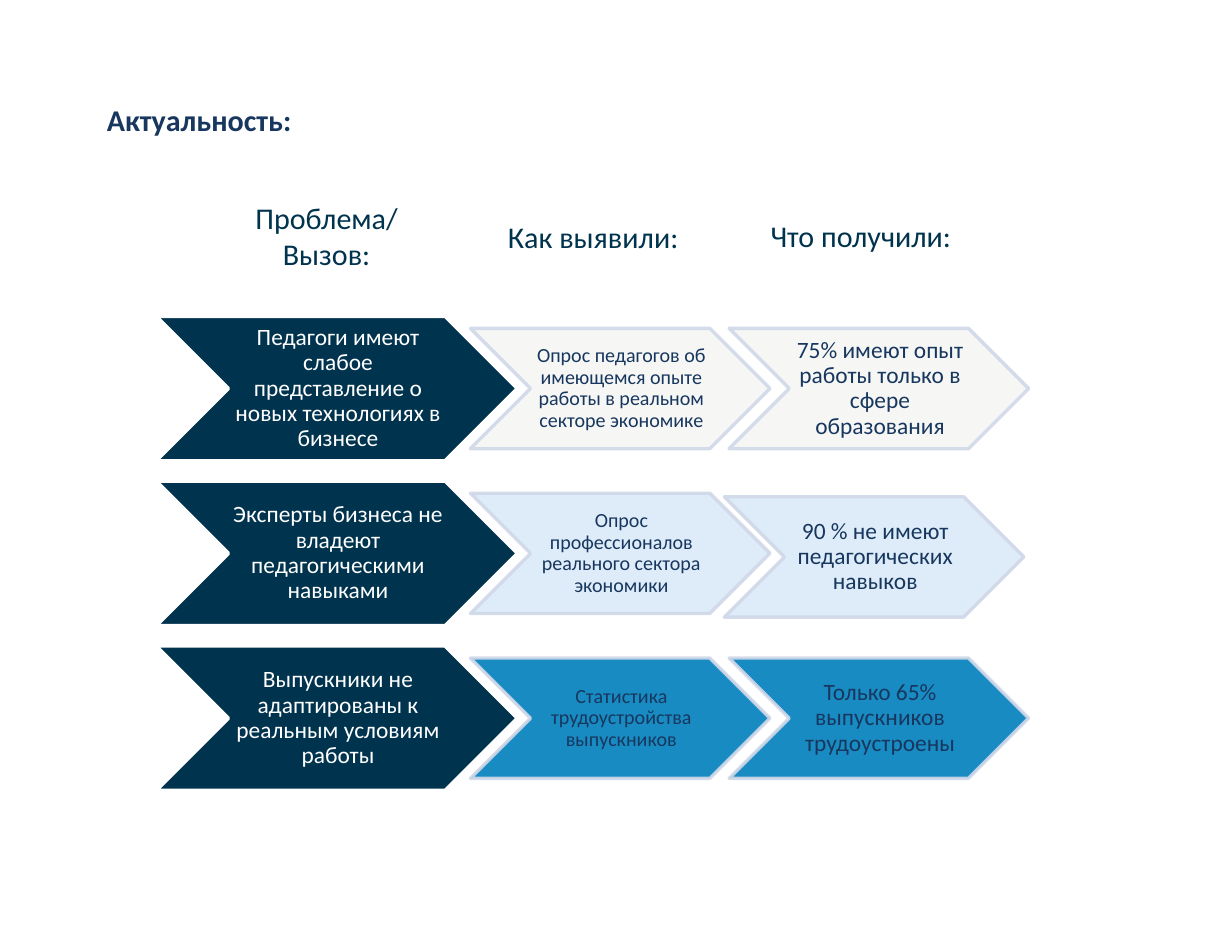
from lxml import etree
from pptx import Presentation
from pptx.dml.color import RGBColor
from pptx.enum.shapes import MSO_SHAPE
from pptx.enum.text import MSO_ANCHOR, PP_ALIGN
from pptx.oxml.ns import qn
from pptx.util import Inches, Pt

RECT, CHEVRON = MSO_SHAPE.RECTANGLE, MSO_SHAPE.CHEVRON
TOP, MIDDLE = MSO_ANCHOR.TOP, MSO_ANCHOR.MIDDLE
LEFT, CENTER = PP_ALIGN.LEFT, PP_ALIGN.CENTER

COLORS = {
    "white": "FFFFFF", "navy": "00334E", "ink": "17375E", "outline": "D0D8E8",
    "grey": "F6F6F5", "pale": "DBEBFA", "blue": "007FBD",
}
FONT = "Calibri"
ROW_PITCH = 1.37

HEADERS = [
    ((1.8, 1.61, 1.83, 0.71), ["Проблема/", "Вызов:"]),
    ((4.04, 1.77, 1.78, 0.4), ["Как выявили:"]),
    ((6.21, 1.76, 1.89, 0.4), ["Что получили:"]),
]
ROWS = [
    ("grey", "Педагоги имеют слабое представление о новых технологиях в бизнесе",
     "Опрос педагогов об имеющемся опыте работы в реальном секторе экономике",
     "75% имеют опыт работы только в сфере образования", (0, 0)),
    ("pale", "Эксперты бизнеса не владеют педагогическими навыками",
     "Опрос профессионалов реального сектора экономики",
     "90 % не имеют педагогических навыков", (-0.04, 0.03)),
    ("blue", "Выпускники не адаптированы к реальным условиям работы",
     "Статистика трудоустройства выпускников",
     "Только 65% выпускников трудоустроены", (0, 0)),
]


def rgb(name):
    """Return the named colour."""
    return RGBColor.from_string(COLORS[name])


def set_alpha(fill, percent):
    """Make a solid fill element partly transparent."""
    alpha = etree.SubElement(fill.find(qn("a:srgbClr")), qn("a:alpha"))
    alpha.set("val", str(percent * 1000))


def write(tf, lines, size, color, align=CENTER, bold=False, spacing=None):
    """Fill a text frame with one paragraph per line."""
    tf.word_wrap = True
    for i, line in enumerate(lines):
        p = tf.paragraphs[0] if i == 0 else tf.add_paragraph()
        p.alignment = align
        if spacing:
            p.line_spacing = spacing
        r = p.add_run()
        r.text = line
        r.font.name, r.font.size, r.font.bold = FONT, Pt(size), bold
        r.font.color.rgb = rgb(color)


def add_title(s, box, text):
    """Place the slide title in the box."""
    tb = s.shapes.add_textbox(*map(Inches, box))
    write(tb.text_frame, [text], 18, "ink", LEFT, True)


def add_header(s, box, lines):
    """Place a column heading in the box."""
    sp = s.shapes.add_shape(RECT, *map(Inches, box))
    sp.shadow.inherit = False
    sp.fill.solid()
    sp.fill.fore_color.rgb = rgb("white")
    sp.line.fill.background()
    sp.text_frame.vertical_anchor = TOP
    write(sp.text_frame, lines, 18, "navy")


def add_chevron(s, box, text, size, fill, line, color, opacity=100):
    """Place a chevron with its text in the box."""
    sp = s.shapes.add_shape(CHEVRON, *map(Inches, box))
    sp.shadow.inherit = False
    sp.fill.solid()
    sp.fill.fore_color.rgb = rgb(fill)
    sp.line.color.rgb = rgb(line)
    sp.line.width = Pt(2)
    if opacity < 100:
        for parent in (sp._element.spPr, sp.line._ln):
            set_alpha(parent.find(qn("a:solidFill")), opacity)
    tf = sp.text_frame
    tf.vertical_anchor = MIDDLE
    tf.margin_left, tf.margin_right = Inches(0.02), 0
    tf.margin_top = tf.margin_bottom = Inches(0.01)
    write(tf, [text], size, color, spacing=0.9)


def add_row(s, x, y, row):
    """Place a problem, its survey and its finding from left to right."""
    fill, problem, survey, finding, (dx, dy) = row
    add_chevron(s, (x, y, 3, 1.2), problem, 14, "navy", "white", "white")
    y += 0.1
    add_chevron(s, (x + 2.61, y, 2.49, 1), survey, 12, fill, "outline", "ink", 90)
    add_chevron(s, (x + 4.76 + dx, y + dy, 2.49, 1), finding, 14, fill,
                "outline", "ink", 90)


def main():
    """Build and save the slide."""
    prs = Presentation()
    prs.slide_width, prs.slide_height = Inches(10.24), Inches(7.88)
    s = prs.slides.add_slide(prs.slide_layouts[6])
    add_title(s, (0.79, 0.79, 8.74, 0.4), "Актуальность:")
    for box, lines in HEADERS:
        add_header(s, box, lines)
    for i, row in enumerate(ROWS):
        add_row(s, 1.3, 2.63 + i * ROW_PITCH, row)
    prs.save("out.pptx")


if __name__ == "__main__":
    main()
